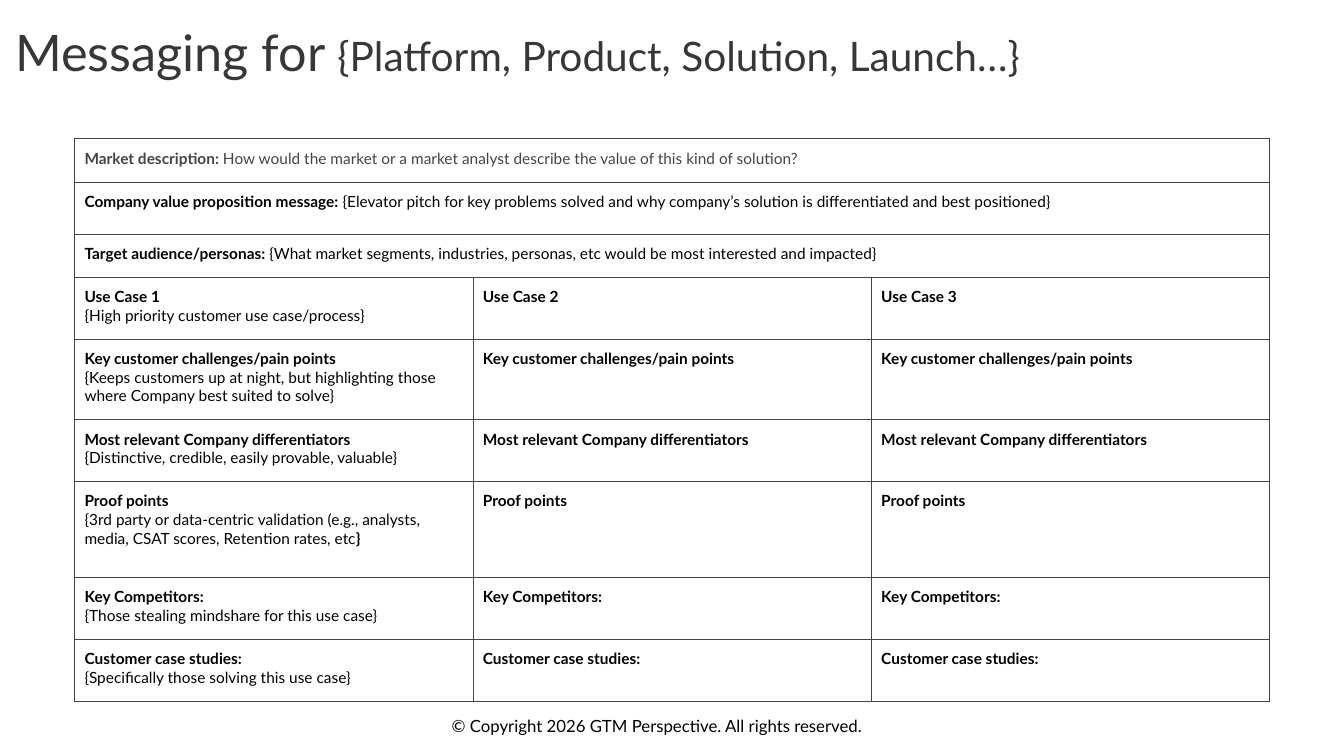
"""Build a messaging framework slide with a table of use cases."""
from dataclasses import dataclass

from lxml.etree import fromstring
from pptx import Presentation
from pptx.dml.color import RGBColor as Color
from pptx.oxml.ns import nsdecls
from pptx.util import Cm, Pt


@dataclass(frozen=True)
class Theme:
    font: str = "Lato"
    title: Color = Color.from_string("373737")
    muted: Color = Color.from_string("404547")
    text: Color = Color.from_string("000000")
    paper: Color = Color.from_string("FFFFFF")
    border: str = "404547"
    title_size: Pt = Pt(36)
    subject_size: Pt = Pt(29)
    table_size: Pt = Pt(11)
    footer_size: Pt = Pt(12)
    border_width: Pt = Pt(0.75)


theme = Theme()


def style(font, size, color):
    font.name = theme.font
    font.size = size
    font.color.rgb = color


def write_runs(paragraph, runs, color):
    style(paragraph.font, theme.table_size, color)
    for text, bold in runs:
        run = paragraph.add_run()
        run.text = text
        run.font.bold = bold


presentation = Presentation()
presentation.slide_width = Cm(33.87)
presentation.slide_height = Cm(19.05)
slide = presentation.slides.add_slide(presentation.slide_layouts[6])

footer = slide.shapes.add_textbox(Cm(11.13), Cm(17.91), Cm(11.63), Cm(0.76))
footer.text_frame.word_wrap = True
paragraph = footer.text_frame.paragraphs[0]
paragraph.text = "© Copyright 2026 GTM Perspective. All rights reserved."
style(paragraph.font, theme.footer_size, theme.text)

title = slide.shapes.add_textbox(Cm(0.38), Cm(0.71), Cm(25.63), Cm(2.87))
frame = title.text_frame
frame.word_wrap = True
frame.margin_left = frame.margin_right = frame.margin_top = frame.margin_bottom = 0
paragraph = frame.paragraphs[0]
paragraph.line_spacing = 0.9
for text, size in (
    ("Messaging for ", theme.title_size),
    ("{Platform, Product, Solution, Launch…}", theme.subject_size),
):
    run = paragraph.add_run()
    run.text = text
    style(run.font, size, theme.title)

overview = [
    ("Market description: ",
     "How would the market or a market analyst describe the value of this kind of solution?",
     theme.muted),
    ("Company value proposition message: ",
     "{Elevator pitch for key problems solved and why company’s solution is "
     "differentiated and best positioned}",
     theme.text),
    ("Target audience/personas: ",
     "{What market segments, industries, personas, etc would be most interested and impacted}",
     theme.text),
]
use_case_rows = [
    ("Use Case {}", [("{High priority customer use case/process}", False)]),
    ("Key customer challenges/pain points",
     [("{Keeps customers up at night, but highlighting those where Company best suited to solve}",
       False)]),
    ("Most relevant Company differentiators",
     [("{Distinctive, credible, easily provable, valuable}", False)]),
    ("Proof points",
     [("{3rd party or data-centric validation (e.g., analysts, media, CSAT scores, "
       "Retention rates, etc", False), ("}", True)]),
    ("Key Competitors:", [("{Those stealing mindshare for this use case}", False)]),
    ("Customer case studies:", [("{Specifically those solving this use case}", False)]),
]
row_heights = [1.1, 1.3, 1.09, 1.56, 2.03, 1.56, 2.42, 1.56, 1.56]
column_count = 3
column_width = 10.04

table = slide.shapes.add_table(
    len(row_heights), column_count, Cm(1.88), Cm(3.5),
    Cm(column_count * column_width), Cm(sum(row_heights)),
).table
table.first_row = table.horz_banding = False
for column in table.columns:
    column.width = Cm(column_width)
for row, height in zip(table.rows, row_heights):
    row.height = Cm(height)

for cell in table.iter_cells():
    cell.margin_left = cell.margin_right = cell.margin_top = cell.margin_bottom = Cm(0.25)
    cell.fill.solid()
    cell.fill.fore_color.rgb = theme.paper
    properties = cell._tc.get_or_add_tcPr()
    for position, side in enumerate("LRTB"):
        properties.insert(position, fromstring(
            f'<a:ln{side} {nsdecls("a")} w="{theme.border_width}"><a:solidFill>'
            f'<a:srgbClr val="{theme.border}"/></a:solidFill></a:ln{side}>'
        ))

for row_index, (label, prompt, color) in enumerate(overview):
    cell = table.cell(row_index, 0)
    cell.merge(table.cell(row_index, column_count - 1))
    write_runs(cell.text_frame.paragraphs[0], [(label, True), (prompt, False)], color)

for row_index, (heading, prompt) in enumerate(use_case_rows, start=len(overview)):
    for column_index in range(column_count):
        frame = table.cell(row_index, column_index).text_frame
        label = heading.format(column_index + 1)
        write_runs(frame.paragraphs[0], [(label, True)], theme.text)
        if column_index == 0:
            write_runs(frame.add_paragraph(), prompt, theme.text)

presentation.save("out.pptx")
